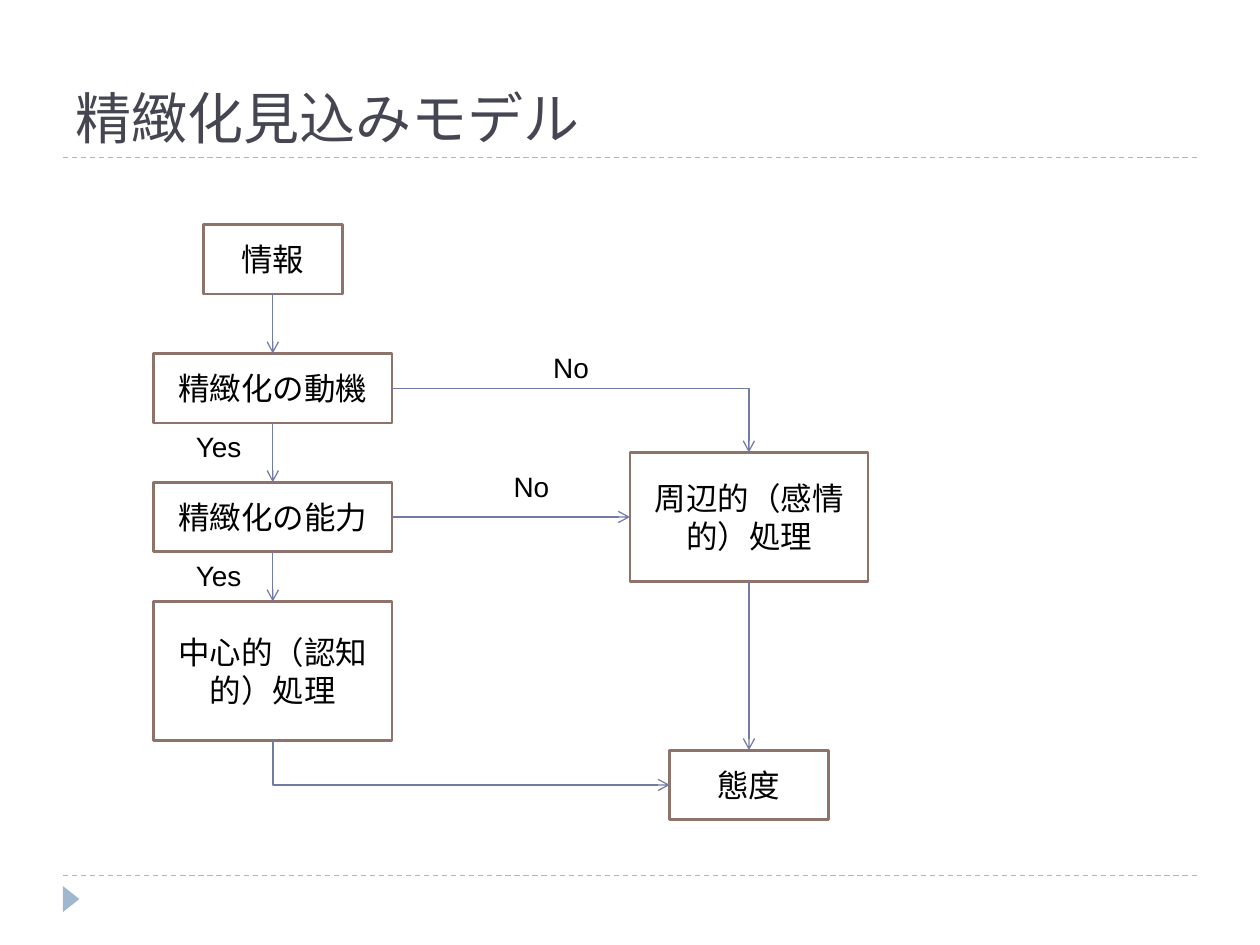
from lxml import etree
from pptx import Presentation
from pptx.dml.color import RGBColor
from pptx.enum import dml, shapes, text
from pptx.oxml import ns
from pptx.util import Pt

INK = RGBColor(0x00, 0x00, 0x00)
PAPER = RGBColor(0xFF, 0xFF, 0xFF)
TITLE = RGBColor(0x46, 0x46, 0x53)
ACCENT = RGBColor(0x9F, 0xB8, 0xCD)
BORDER = RGBColor(0x8E, 0x73, 0x6A)
ARROW = RGBColor(0x72, 0x7C, 0xA3)

TOP, LEFT, BOTTOM, RIGHT = range(4)
LEFT_AXIS, RIGHT_AXIS = 155.9, 428
ROW = 39.7  # height of a one-line box

# name: (text, centre x, top, width, height)
BOXES = {
    "information": ("情報", LEFT_AXIS, 128.2, 79.4, ROW),
    "motive": ("精緻化の動機", LEFT_AXIS, 202, 136.1, ROW),
    "ability": ("精緻化の能力", LEFT_AXIS, 275.6, 136.1, ROW),
    "central": ("中心的（認知的）処理", LEFT_AXIS, 343.7, 136.1, 2 * ROW),
    "peripheral": ("周辺的（感情的）処理", RIGHT_AXIS, 258.6, 136.1, 73.7),
    "attitude": ("態度", RIGHT_AXIS, 428.7, 90.7, ROW),
}
# from box, side, to box, side
ARROWS = [
    ("information", BOTTOM, "motive", TOP),
    ("motive", BOTTOM, "ability", TOP),
    ("ability", BOTTOM, "central", TOP),
    ("ability", RIGHT, "peripheral", LEFT),
    ("peripheral", BOTTOM, "attitude", TOP),
    ("motive", RIGHT, "peripheral", TOP),
    ("central", BOTTOM, "attitude", LEFT),
]
# text, left, top, width
LABELS = [
    ("No", 309, 196.7, 35),
    ("No", 286.4, 264.5, 35),
    ("Yes", 104.9, 242, 41),
    ("Yes", 104.9, 315.6, 41),
]


def apply_format(target, values):
    for name, value in values.items():
        setattr(target, name, value)


def write(frame, words, font, size, color, align=text.PP_ALIGN.LEFT):
    para = frame.paragraphs[0]
    para.alignment = align
    span = para.add_run()
    span.text = words
    apply_format(span.font, {"name": font, "size": Pt(size)})
    span.font.color.rgb = color


def add_line(page, kind, start, end, color):
    line = page.shapes.add_connector(kind, *map(Pt, start + end))
    line.line.color.rgb = color
    line.line.width = Pt(0.75)
    etree.SubElement(line._element.spPr, ns.qn("a:effectLst"))
    return line


def add_rule(page, y):
    rule = add_line(page, shapes.MSO_CONNECTOR.STRAIGHT, (36, y), (684, y), ACCENT)
    rule.line.dash_style = dml.MSO_LINE.DASH


def add_marker(page):
    marker = page.shapes.add_shape(
        shapes.MSO_SHAPE.ISOSCELES_TRIANGLE, Pt(33.1), Pt(509), Pt(15), Pt(9.5))
    marker.rotation = 90
    marker.shadow.inherit = False
    marker.fill.solid()
    marker.fill.fore_color.rgb = ACCENT
    marker.line.fill.background()


def add_title(page, words):
    title = page.shapes.title
    apply_format(title, {"left": Pt(36), "top": Pt(12.2),
                         "width": Pt(648), "height": Pt(77.8)})
    title.text_frame.vertical_anchor = text.MSO_ANCHOR.BOTTOM
    write(title.text_frame, words, "Roboto Slab", 32, TITLE)


def add_box(page, words, center, top, width, height):
    box = page.shapes.add_shape(shapes.MSO_SHAPE.RECTANGLE, Pt(center - width / 2),
                                Pt(top), Pt(width), Pt(height))
    box.shadow.inherit = False
    box.fill.solid()
    box.fill.fore_color.rgb = PAPER
    box.line.color.rgb = BORDER
    box.line.width = Pt(1.5)
    apply_format(box.text_frame, {"word_wrap": True,
                                  "vertical_anchor": text.MSO_ANCHOR.MIDDLE})
    write(box.text_frame, words, "Cabin", 18, INK, text.PP_ALIGN.CENTER)
    return box


def side_point(box, side):
    x = box.left + box.width * {LEFT: 0, RIGHT: 1}.get(side, 0.5)
    y = box.top + box.height * {TOP: 0, BOTTOM: 1}.get(side, 0.5)
    return x / Pt(1), y / Pt(1)


def bend_once(line, down_first):
    """Give an elbow a single corner; turn it if it sets off downwards."""
    properties = line._element.spPr
    properties.find(ns.qn("a:prstGeom")).set("prst", "bentConnector2")
    if down_first:
        width, height = line.width, line.height
        shift = (width - height) // 2
        apply_format(line, {"left": line.left + shift, "top": line.top - shift,
                            "width": height, "height": width})
        frame = properties.find(ns.qn("a:xfrm"))
        frame.set("rot", "16200000")
        frame.set("flipH", "1")


def add_arrow(page, source, source_side, target, target_side):
    straight = (source_side - target_side) % 2 == 0
    kind = shapes.MSO_CONNECTOR.STRAIGHT if straight else shapes.MSO_CONNECTOR.ELBOW
    line = add_line(page, kind, side_point(source, source_side),
                    side_point(target, target_side), ARROW)
    line.begin_connect(source, source_side)
    line.end_connect(target, target_side)
    if not straight:
        bend_once(line, source_side == BOTTOM)
    etree.SubElement(line.line._get_or_add_ln(), ns.qn("a:tailEnd"), type="arrow")


def add_label(page, words, left, top, width):
    label = page.shapes.add_textbox(Pt(left), Pt(top), Pt(width), Pt(26.6))
    apply_format(label.text_frame, {"word_wrap": False,
                                    "auto_size": text.MSO_AUTO_SIZE.SHAPE_TO_FIT_TEXT})
    write(label.text_frame, words, "Arial", 16, INK)


def main():
    deck = Presentation()
    apply_format(deck, {"slide_width": Pt(720), "slide_height": Pt(540)})
    page = deck.slides.add_slide(deck.slide_layouts[5])

    # Frame of the page
    for y in (500.4, 90):
        add_rule(page, y)
    add_marker(page)
    add_title(page, "精緻化見込みモデル")

    # Flow chart
    boxes = {name: add_box(page, *values) for name, values in BOXES.items()}
    for source, source_side, target, target_side in ARROWS:
        add_arrow(page, boxes[source], source_side, boxes[target], target_side)
    for label in LABELS:
        add_label(page, *label)

    deck.save("out.pptx")


if __name__ == "__main__":
    main()
